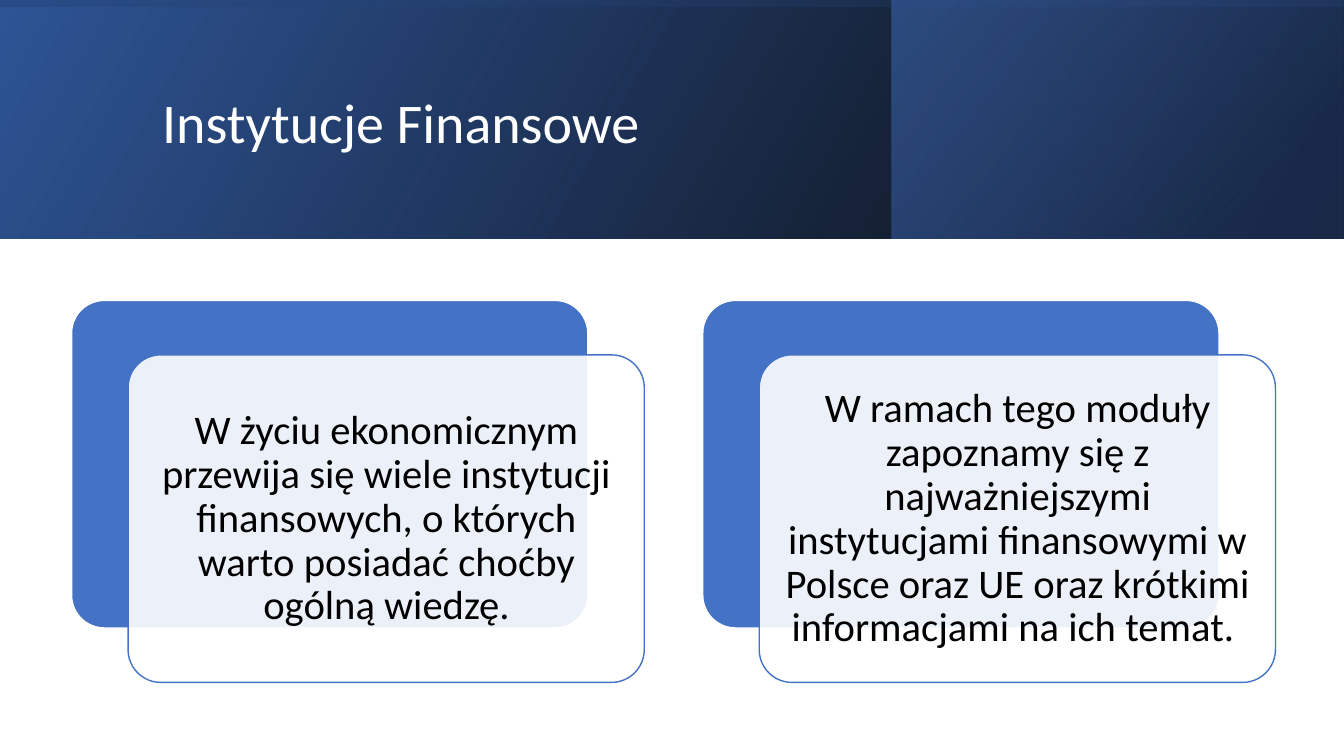
from dataclasses import dataclass

from lxml import etree
from pptx import Presentation
from pptx import util as u
from pptx.dml.color import RGBColor
from pptx.enum import shapes, text
from pptx.oxml import ns

BLUE, WHITE, BLACK = "4472C4", "FFFFFF", "000000"
CARD_STEP = 6.26


@dataclass
class Box:
    left: float
    top: float
    width: float
    height: float

    def emu(self, dx: float = 0) -> list:
        return [u.Inches(n) for n in (self.left + dx, self.top, self.width, self.height)]


@dataclass
class Stop:
    position: int
    color: str
    alpha: int


@dataclass
class Band:
    box: Box
    stops: list[Stop]
    angle: int
    rotation: int = 0


@dataclass
class Label:
    box: Box
    words: str
    size: int
    color: str
    align: text.PP_ALIGN
    inset: float


BANDS = [
    Band(Box(0, 0, 13.33, 2.37), [Stop(0, BLACK, 96), Stop(100, "2F5597", 100)], 330),
    Band(Box(8.84, 0, 4.48, 2.37), [Stop(19, "203864", 68), Stop(100, BLUE, 48)], 320),
    Band(Box(5.48, -5.48, 2.37, 13.33), [Stop(23, "2F5597", 16), Stop(99, BLACK, 45)], 350, 270),
]
TITLE = Label(Box(1.51, 0.38, 10.63, 1.72), "Instytucje Finansowe", 40, WHITE,
              text.PP_ALIGN.LEFT, 0.1)
CARD_BACK = Box(0.71, 2.98, 5.12, 3.25)
CARD_FRONT = Box(1.27, 3.52, 5.12, 3.25)
CARD_TEXTS = [
    "W życiu ekonomicznym przewija się wiele instytucji finansowych, "
    "o których warto posiadać choćby ogólną wiedzę.",
    "W ramach tego moduły zapoznamy się z najważniejszymi instytucjami finansowymi "
    "w Polsce oraz UE oraz krótkimi informacjami na ich temat. ",
]


def rgb(color: str) -> RGBColor:
    return RGBColor.from_string(color)


def add_alpha(color_element, percent: int) -> None:
    etree.SubElement(color_element, ns.qn("a:alpha"), val=str(percent * 1000))


def add_band(slide, band: Band) -> None:
    s = slide.shapes.add_shape(shapes.MSO_SHAPE.RECTANGLE, *band.box.emu())
    s.shadow.inherit = False
    s.line.fill.background()
    s.rotation = band.rotation
    sp_pr = s.element.spPr
    sp_pr.find(ns.qn("a:xfrm")).set("flipH", "1")
    s.fill.background()
    grad = etree.Element(ns.qn("a:gradFill"), rotWithShape="1")
    stops = etree.SubElement(grad, ns.qn("a:gsLst"))
    for stop in band.stops:
        gs = etree.SubElement(stops, ns.qn("a:gs"), pos=str(stop.position * 1000))
        add_alpha(etree.SubElement(gs, ns.qn("a:srgbClr"), val=stop.color), stop.alpha)
    etree.SubElement(grad, ns.qn("a:lin"), ang=str(band.angle * 60000), scaled="0")
    sp_pr.replace(sp_pr.find(ns.qn("a:noFill")), grad)


def add_panel(slide, box: Box, dx: float, fill: str, line: str, alpha: int = 100) -> None:
    s = slide.shapes.add_shape(shapes.MSO_SHAPE.ROUNDED_RECTANGLE, *box.emu(dx))
    s.shadow.inherit = False
    s.adjustments[0] = 0.1
    s.fill.solid()
    s.fill.fore_color.rgb = rgb(fill)
    if alpha < 100:
        add_alpha(s.element.spPr.find(ns.qn("a:solidFill"))[0], alpha)
    s.line.color.rgb = rgb(line)
    s.line.width = u.Pt(1)


def add_label(slide, label: Label) -> None:
    tf = slide.shapes.add_textbox(*label.box.emu()).text_frame
    inset = u.Inches(label.inset)
    frame_format = {
        "word_wrap": True, "vertical_anchor": text.MSO_ANCHOR.MIDDLE,
        "margin_left": inset, "margin_right": inset,
        "margin_top": inset, "margin_bottom": inset,
    }
    p = tf.paragraphs[0]
    r = p.add_run()
    r.text = label.words
    r.font.color.rgb = rgb(label.color)
    formats = [
        (tf, frame_format),
        (p, {"alignment": label.align, "line_spacing": 0.9}),
        (r.font, {"name": "Calibri", "size": u.Pt(label.size)}),
    ]
    for target, values in formats:
        for name, value in values.items():
            setattr(target, name, value)


def main() -> None:
    prs = Presentation()
    prs.slide_width, prs.slide_height = u.Inches(13.33), u.Inches(7.5)
    slide = prs.slides.add_slide(prs.slide_layouts[6])
    for band in BANDS:
        add_band(slide, band)
    add_label(slide, TITLE)
    for i, words in enumerate(CARD_TEXTS):
        dx = i * CARD_STEP
        add_panel(slide, CARD_BACK, dx, BLUE, WHITE)
        add_panel(slide, CARD_FRONT, dx, WHITE, BLUE, 90)
        box = Box(1.37 + dx, 3.62, 4.93, 3.06)
        add_label(slide, Label(box, words, 29, BLACK, text.PP_ALIGN.CENTER, 0.12))
    prs.save("out.pptx")


if __name__ == "__main__":
    main()
